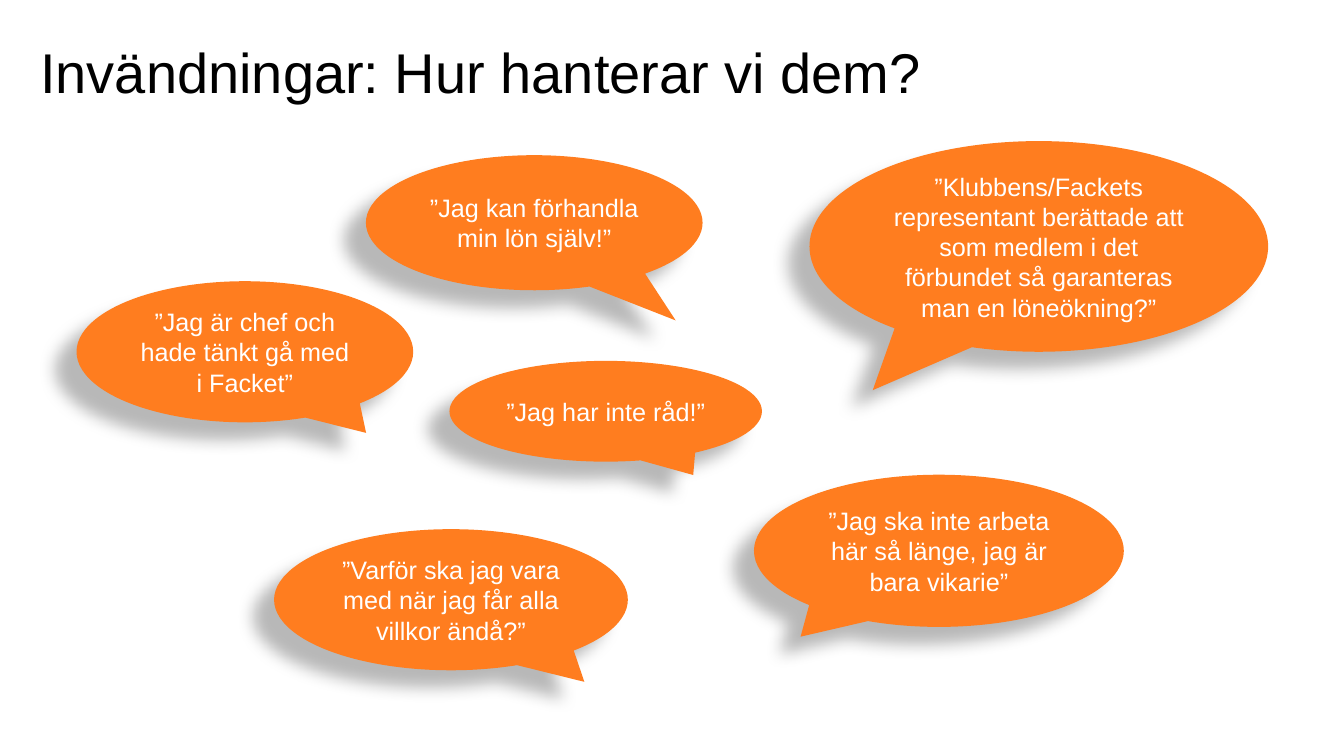
from lxml import etree
from pptx import Presentation
from pptx.dml.color import RGBColor
from pptx.enum import shapes, text
from pptx.oxml import ns
from pptx.util import Pt

# Content: lengths in points
TITLE = "Invändningar: Hur hanterar vi dem?"
FONT = "Arial"
ORANGE, WHITE, BLACK = "FF7D1F", "FFFFFF", "000000"
SHADOW = {"blur": 11.8, "distance": 19.7, "angle": 141, "opacity": 28}

# Objection, (left, top, width, height), pointer tip relative to the centre
OBJECTIONS = [
    ("”Jag kan förhandla min lön själv!”",
     (261.4, 110.9, 240.5, 96.5), (0.42, 0.723)),
    ("”Jag ska inte arbeta här så länge, jag är bara vikarie”",
     (538.6, 339.1, 264.2, 108.7), (-0.374, 0.564)),
    ("”Varför ska jag vara med när jag får alla villkor ändå?”",
     (195.8, 378, 252.7, 100.8), (0.377, 0.582)),
    ("”Jag har inte råd!”",
     (321.1, 257.8, 223.2, 72), (0.28, 0.632)),
    ("”Klubbens/Fackets representant berättade att som medlem i det "
     "förbundet så garanteras man en löneökning?”",
     (578.2, 100.8, 327.6, 150.5), (-0.362, 0.682)),
    ("”Jag är chef och hade tänkt gå med i Facket”",
     (54.7, 200.9, 240.5, 100.8), (0.36, 0.575)),
]


def color(value):
    return RGBColor.from_string(value)


def set_font(paragraph, size, value):
    paragraph.font.name = FONT
    paragraph.font.size = Pt(size)
    paragraph.font.color.rgb = color(value)


def add_shadow(shape):
    shape.shadow.inherit = False
    effects = shape._element.spPr.find(ns.qn("a:effectLst"))
    shadow = etree.SubElement(
        effects, ns.qn("a:outerShdw"),
        blurRad=str(Pt(SHADOW["blur"])), dist=str(Pt(SHADOW["distance"])),
        dir=str(SHADOW["angle"] * 60000), rotWithShape="0")
    tint = etree.SubElement(shadow, ns.qn("a:srgbClr"), val=BLACK)
    etree.SubElement(tint, ns.qn("a:alpha"), val=str(SHADOW["opacity"] * 1000))


def add_title(slide):
    box = slide.shapes.add_textbox(Pt(28.8), Pt(32.4), Pt(902.2), Pt(95.8))
    frame = box.text_frame
    frame.word_wrap = True
    frame.margin_left = frame.margin_right = 0
    frame.margin_top = frame.margin_bottom = 0
    paragraph = frame.paragraphs[0]
    paragraph.text = TITLE
    paragraph.line_spacing = 0.9
    set_font(paragraph, 40, BLACK)


def add_bubble(slide, words, place, tip):
    shape = slide.shapes.add_shape(
        shapes.MSO_SHAPE.OVAL_CALLOUT, *(Pt(length) for length in place))
    for index, offset in enumerate(tip):
        shape.adjustments[index] = offset
    shape.fill.solid()
    shape.fill.fore_color.rgb = color(ORANGE)
    shape.line.fill.background()
    add_shadow(shape)
    frame = shape.text_frame
    frame.word_wrap = True
    frame.vertical_anchor = text.MSO_ANCHOR.MIDDLE
    paragraph = frame.paragraphs[0]
    paragraph.text = words
    paragraph.alignment = text.PP_ALIGN.CENTER
    set_font(paragraph, 18, WHITE)


def main():
    presentation = Presentation()
    presentation.slide_width, presentation.slide_height = Pt(960), Pt(540)
    slide = presentation.slides.add_slide(presentation.slide_layouts[6])
    add_title(slide)
    for objection in OBJECTIONS:
        add_bubble(slide, *objection)
    presentation.save("out.pptx")


if __name__ == "__main__":
    main()
